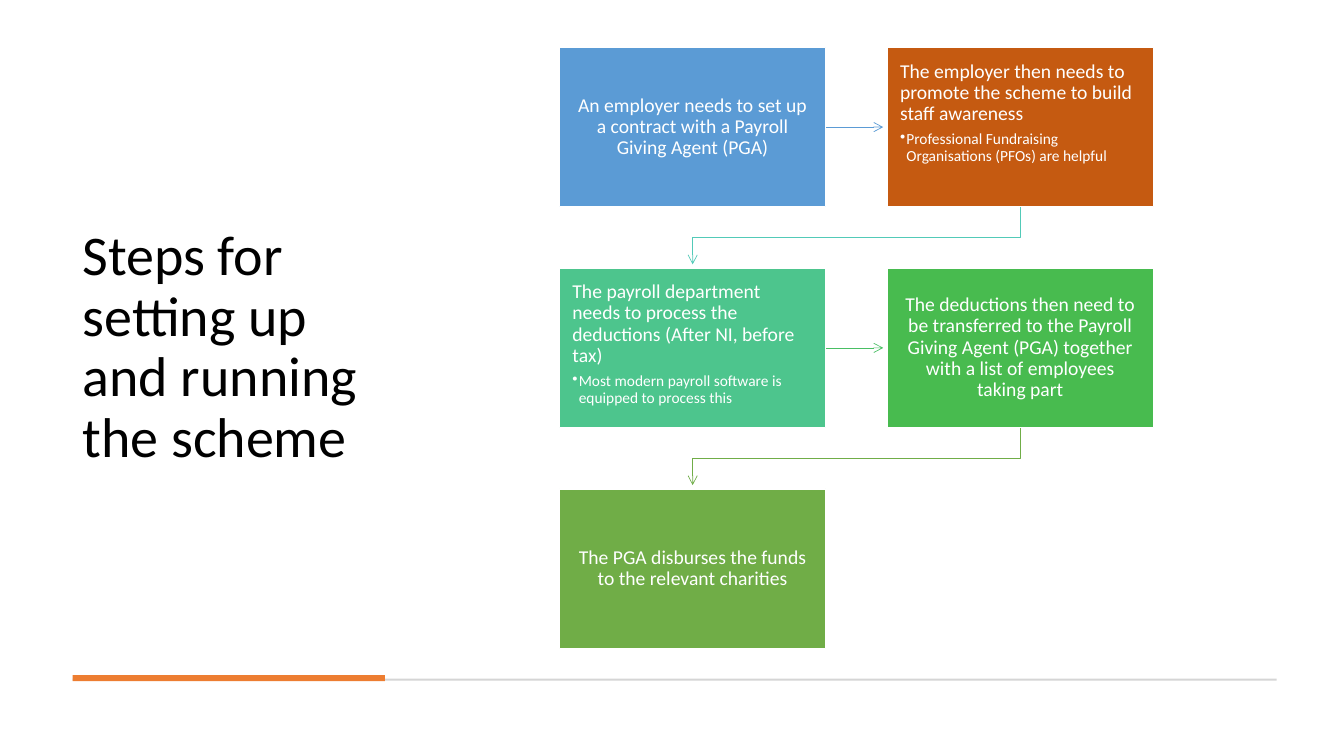
from dataclasses import dataclass
from typing import Optional

from lxml.etree import SubElement
from pptx import Presentation
from pptx.dml.color import RGBColor
from pptx.enum.shapes import MSO_CONNECTOR as Connector, MSO_SHAPE as Shape
from pptx.enum.text import MSO_ANCHOR as Anchor, MSO_AUTO_SIZE as AutoSize, PP_ALIGN as Align
from pptx.oxml.ns import qn
from pptx.util import Pt


@dataclass(frozen=True)
class Theme:
    font: str = "Calibri"
    title_size: float = 40
    step_size: float = 14
    detail_size: float = 11
    ink: str = "000000"
    paper: str = "FFFFFF"
    rule: str = "D5D5D5"
    accent: str = "ED7D31"


@dataclass(frozen=True)
class Step:
    text: str
    fill: str
    arrow: Optional[str] = None
    detail: Optional[str] = None


THEME = Theme()
SLIDE_W, SLIDE_H = 960, 540
MARGIN = 51.84
TITLE_W = 223.2
GRID_LEFT, GRID_TOP = 399.6, 33.84
BOX_W, BOX_H = 190.3, 113.9
PITCH_X, PITCH_Y = 234, 157.7
COLUMNS = 2
ARROW_GAP = 2.7
BULLET_INDENT = 4.5

STEPS = [
    Step("An employer needs to set up a contract with a Payroll Giving Agent (PGA)",
         "5B9BD5", "5B9BD5"),
    Step("The employer then needs to promote the scheme to build staff awareness",
         "C55A11", "52CAB8",
         "Professional Fundraising Organisations (PFOs) are helpful"),
    Step("The payroll department needs to process the deductions (After NI, before tax)",
         "4DC58D", "49BF64",
         "Most modern payroll software is equipped to process this"),
    Step("The deductions then need to be transferred to the Payroll Giving Agent (PGA) "
         "together with a list of employees taking part",
         "48BB4F", "70AD47"),
    Step("The PGA disburses the funds to the relevant charities", "70AD47"),
]


def rgb(color: str) -> RGBColor:
    return RGBColor.from_string(color)


def write(p, text: str, size: float, color: str, align=Align.LEFT, after: float = 0) -> None:
    p.alignment = align
    p.line_spacing = 0.9
    p.space_before = Pt(0)
    p.space_after = Pt(after)
    r = p.add_run()
    r.text = text
    r.font.name = THEME.font
    r.font.size = Pt(size)
    r.font.color.rgb = rgb(color)


def add_bullet(p) -> None:
    p.level = 1
    pPr = p._p.get_or_add_pPr()
    pPr.set("marL", str(Pt(BULLET_INDENT)))
    pPr.set("indent", str(-Pt(BULLET_INDENT)))
    SubElement(pPr, qn("a:buChar")).set("char", "•")


def add_rect(s, left: float, top: float, width: float, height: float, fill: str):
    sp = s.shapes.add_shape(Shape.RECTANGLE, Pt(left), Pt(top), Pt(width), Pt(height))
    sp.shadow.inherit = False
    sp.fill.solid()
    sp.fill.fore_color.rgb = rgb(fill)
    sp.line.fill.background()
    return sp


def add_title(s, text: str) -> None:
    sp = s.shapes.title
    sp.left, sp.top = Pt(MARGIN), Pt(GRID_TOP)
    sp.width, sp.height = Pt(TITLE_W), Pt(429.8)
    tf = sp.text_frame
    tf.word_wrap = True
    tf.auto_size = AutoSize.NONE
    tf.vertical_anchor = Anchor.MIDDLE
    write(tf.paragraphs[0], text, THEME.title_size, THEME.ink)


def box_origin(index: int) -> tuple[float, float]:
    row, column = divmod(index, COLUMNS)
    return GRID_LEFT + column * PITCH_X, GRID_TOP + row * PITCH_Y


def add_step(s, step: Step, left: float, top: float) -> None:
    sp = add_rect(s, left, top, BOX_W, BOX_H, step.fill)
    sp.line.color.rgb = rgb(THEME.paper)
    sp.line.width = Pt(1)
    tf = sp.text_frame
    tf.word_wrap = True
    tf.margin_left = tf.margin_right = Pt(9.3)
    tf.margin_top = tf.margin_bottom = Pt(9.8)
    tf.vertical_anchor = Anchor.TOP if step.detail else Anchor.MIDDLE
    align = Align.LEFT if step.detail else Align.CENTER
    write(tf.paragraphs[0], step.text, THEME.step_size, THEME.paper, align, 4.9)
    if step.detail:
        p = tf.add_paragraph()
        write(p, step.detail, THEME.detail_size, THEME.paper, after=1.65)
        add_bullet(p)


def style_arrow(sp, color: str) -> None:
    sp.line.color.rgb = rgb(color)
    sp.line.width = Pt(0.5)
    spPr = sp.element.spPr
    SubElement(spPr.find(qn("a:ln")), qn("a:tailEnd")).set("type", "arrow")
    SubElement(spPr, qn("a:effectLst"))


def add_across_arrow(s, left: float, top: float, color: str) -> None:
    y = Pt(top + BOX_H / 2)
    sp = s.shapes.add_connector(Connector.STRAIGHT, Pt(left + BOX_W), y,
                                Pt(left + PITCH_X - ARROW_GAP), y)
    style_arrow(sp, color)


def add_return_arrow(s, left: float, top: float, color: str) -> None:
    start_x, start_y = left + BOX_W / 2, top + BOX_H
    end_x, end_y = start_x - PITCH_X, top + PITCH_Y - ARROW_GAP
    turn_y = (start_y + top + PITCH_Y) / 2
    outline = s.shapes.build_freeform(Pt(start_x), Pt(start_y))
    corners = [(start_x, turn_y), (end_x, turn_y), (end_x, end_y)]
    outline.add_line_segments([(Pt(x), Pt(y)) for x, y in corners], close=False)
    sp = outline.convert_to_shape()
    sp.fill.background()
    style_arrow(sp, color)


def main() -> None:
    prs = Presentation()
    prs.slide_width, prs.slide_height = Pt(SLIDE_W), Pt(SLIDE_H)
    s = prs.slides.add_slide(prs.slide_layouts[5])
    add_title(s, "Steps for setting up and running the scheme")
    add_rect(s, MARGIN, 484.8, 860.1, 1.4, THEME.rule)
    add_rect(s, MARGIN, 482.2, TITLE_W, 4.4, THEME.accent)
    for index, step in enumerate(STEPS):
        left, top = box_origin(index)
        if step.arrow:
            ends_row = index % COLUMNS == COLUMNS - 1
            add_arrow = add_return_arrow if ends_row else add_across_arrow
            add_arrow(s, left, top, step.arrow)
        add_step(s, step, left, top)
    prs.save("out.pptx")


if __name__ == "__main__":
    main()
